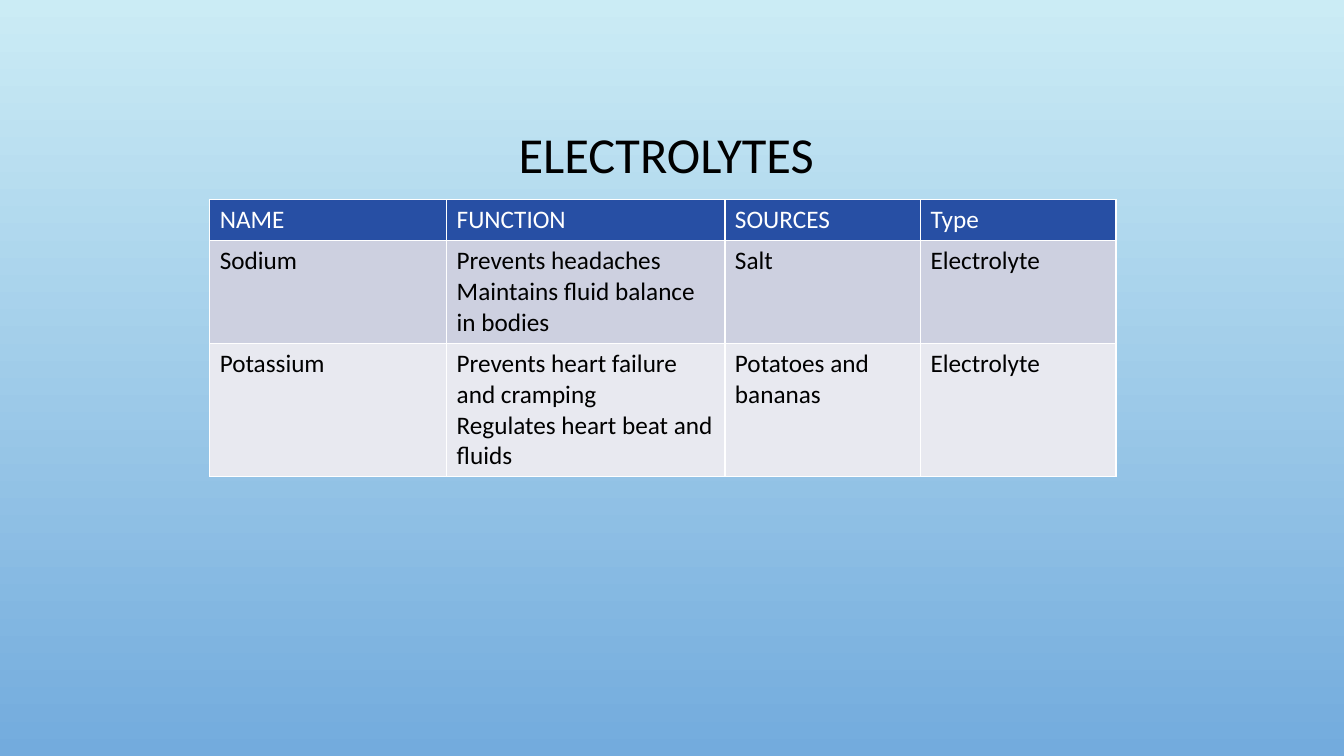
from pptx import Presentation
from pptx.dml.color import RGBColor
from pptx.enum import text
from pptx.util import Inches, Pt

TITLE = "ELECTROLYTES "
ROWS = [
    ["NAME", "FUNCTION", "SOURCES", "Type"],
    ["Sodium", "Prevents headaches\nMaintains fluid balance in bodies",
     "Salt", "Electrolyte"],
    ["Potassium", "Prevents heart failure and cramping\nRegulates heart beat and fluids",
     "Potatoes and bananas", "Electrolyte"],
]
COL_WIDTHS = [2.35, 2.76, 1.94, 1.94]
ROW_HEIGHTS = [0.41, 1.02, 1.32]
ROW_STYLES = [("274FA4", "FFFFFF"), ("CDD0E0", "000000"), ("E8E9F0", "000000")]
BACKGROUND = ["CBECF5", "73ABDD"]


def rgb(value):
    return RGBColor.from_string(value)


def write(tf, content, size=18, color="000000", align=None, spacing=None):
    tf.word_wrap = True
    for i, line in enumerate(content.split("\n")):
        p = tf.add_paragraph() if i else tf.paragraphs[0]
        p.alignment = align
        p.line_spacing = spacing
        r = p.add_run()
        r.text = line
        r.font.name = "Calibri"
        r.font.size = Pt(size)
        r.font.bold = False
        r.font.color.rgb = rgb(color)


def main():
    prs = Presentation()
    prs.slide_width, prs.slide_height = Inches(13.33), Inches(7.5)
    s = prs.slides.add_slide(prs.slide_layouts[6])

    fill = s.background.fill
    fill.gradient()
    fill.gradient_angle = 270
    for stop, color, position in zip(fill.gradient_stops, BACKGROUND, (0, 1)):
        stop.color.rgb = rgb(color)
        stop.position = position

    title = s.shapes.add_textbox(Inches(1), Inches(0.68), Inches(11.33), Inches(1.75))
    title.text_frame.vertical_anchor = text.MSO_ANCHOR.MIDDLE
    write(title.text_frame, TITLE, size=36, align=text.PP_ALIGN.CENTER, spacing=0.9)

    table = s.shapes.add_table(
        len(ROWS), len(COL_WIDTHS), Inches(2.08), Inches(1.98),
        Inches(sum(COL_WIDTHS)), Inches(sum(ROW_HEIGHTS))).table
    for col, width in zip(table.columns, COL_WIDTHS):
        col.width = Inches(width)
    for row, height, values, (back, ink) in zip(table.rows, ROW_HEIGHTS, ROWS, ROW_STYLES):
        row.height = Inches(height)
        for cell, value in zip(row.cells, values):
            cell.fill.solid()
            cell.fill.fore_color.rgb = rgb(back)
            write(cell.text_frame, value, color=ink)

    prs.save("out.pptx")


if __name__ == "__main__":
    main()
